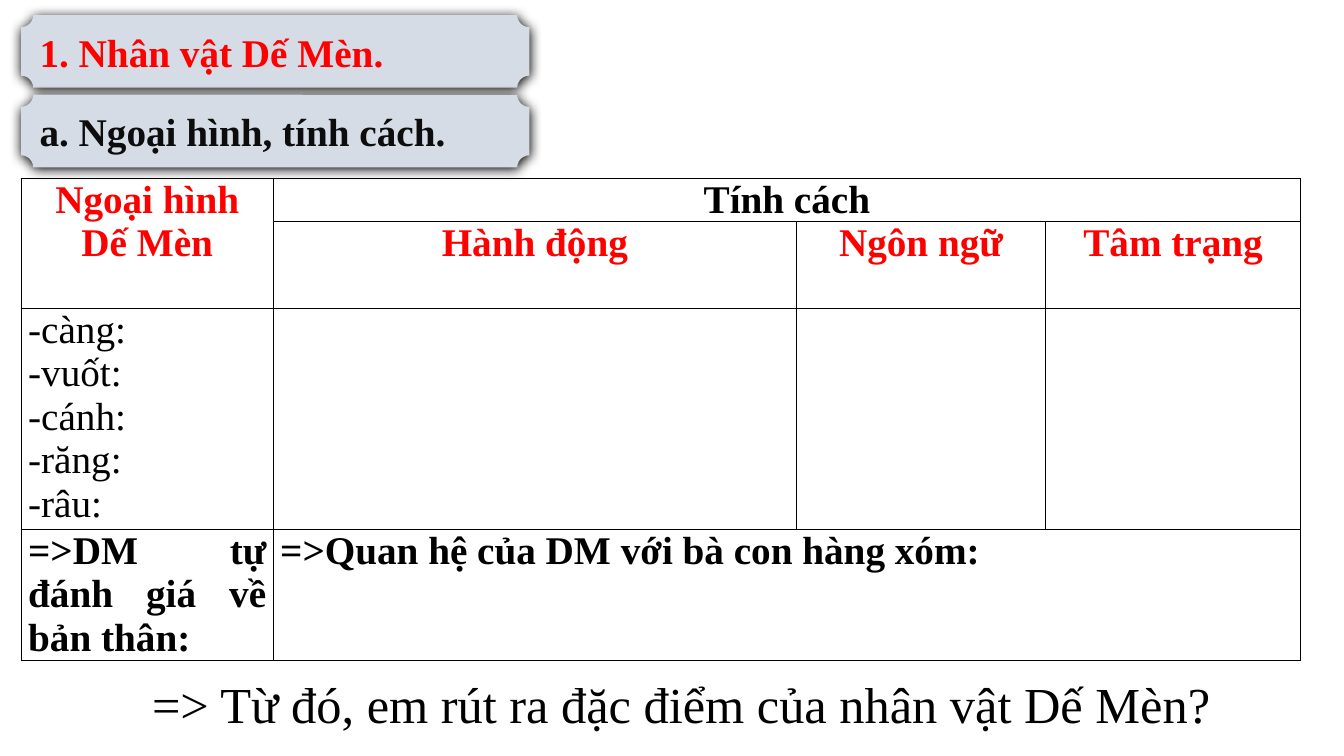
from lxml import etree
from pptx import Presentation
from pptx.dml.color import RGBColor
from pptx.enum.shapes import MSO_SHAPE
from pptx.enum.text import MSO_ANCHOR, PP_ALIGN
from pptx.oxml import parse_xml
from pptx.oxml.ns import nsdecls, qn
from pptx.util import Inches, Pt

PLAQUE = MSO_SHAPE.PLAQUE
MIDDLE = MSO_ANCHOR.MIDDLE
LEFT, CENTER, JUSTIFY = PP_ALIGN.LEFT, PP_ALIGN.CENTER, PP_ALIGN.JUSTIFY

RED = RGBColor(0xFF, 0x00, 0x00)
BLACK = RGBColor(0x00, 0x00, 0x00)
NEAR_BLACK = RGBColor(0x0D, 0x0D, 0x0D)
PALE_BLUE = RGBColor(0xD6, 0xDC, 0xE5)
FONT = "Times New Roman"

HEADINGS = [
    ("1. Nhân vật Dế Mèn.", RED),
    ("a. Ngoại hình, tính cách.", NEAR_BLACK),
]
COLUMN_WIDTHS = [2.5, 5.19, 2.47, 2.53]
ROW_HEIGHTS = [0.43, 0.86, 2.19, 1.3]
MERGES = [((0, 0), (1, 0)), ((0, 1), (0, 3)), ((3, 1), (3, 3))]
CELLS = {
    (0, 0): ("Ngoại hình Dế Mèn", RED, True, CENTER),
    (0, 1): ("Tính cách", BLACK, True, CENTER),
    (1, 1): ("Hành động", RED, True, CENTER),
    (1, 2): ("Ngôn ngữ", RED, True, CENTER),
    (1, 3): ("Tâm trạng", RED, True, CENTER),
    (2, 0): ("-càng:\n-vuốt:\n-cánh:\n-răng:\n-râu:", BLACK, False, JUSTIFY),
    (3, 0): ("=>DM tự đánh giá về bản thân:", BLACK, True, JUSTIFY),
    (3, 1): ("=>Quan hệ của DM với bà con hàng xóm:", BLACK, True, JUSTIFY),
}
QUESTION = "=> Từ đó, em rút ra đặc điểm của nhân vật Dế Mèn?"


def write(text_frame, text, size, color, bold, alignment):
    text_frame.text = text
    for paragraph in text_frame.paragraphs:
        paragraph.alignment = alignment
        for run in paragraph.runs:
            run.font.name = FONT
            run.font.size = Pt(size)
            run.font.bold = bold
            run.font.color.rgb = color


def add_shadow(shape):
    shape.shadow.inherit = False
    effects = shape._element.spPr.find(qn("a:effectLst"))
    effects.append(parse_xml(
        f'<a:outerShdw {nsdecls("a")} blurRad="{Pt(8.5)}" dist="{Pt(1)}" '
        'dir="5400000" algn="t" rotWithShape="0">'
        '<a:srgbClr val="000000"/></a:outerShdw>'))


def add_heading(slide, index, text, color):
    plaque = slide.shapes.add_shape(
        PLAQUE, Inches(0.21), Inches(0.15 + 0.79 * index), Inches(5.04), Inches(0.72))
    plaque.fill.solid()
    plaque.fill.fore_color.rgb = PALE_BLUE
    plaque.line.fill.background()
    add_shadow(plaque)
    plaque.text_frame.vertical_anchor = MIDDLE
    write(plaque.text_frame, text, 28, color, True, LEFT)


def add_borders(cell):
    properties = cell._tc.get_or_add_tcPr()
    for position, side in enumerate(("lnL", "lnR", "lnT", "lnB")):
        line = etree.Element(qn(f"a:{side}"), w=str(Pt(1)))
        fill = etree.SubElement(line, qn("a:solidFill"))
        etree.SubElement(fill, qn("a:srgbClr"), val=str(BLACK))
        properties.insert(position, line)


def add_character_table(slide):
    table = slide.shapes.add_table(
        len(ROW_HEIGHTS), len(COLUMN_WIDTHS), Inches(0.21), Inches(1.77),
        Inches(sum(COLUMN_WIDTHS)), Inches(sum(ROW_HEIGHTS))).table
    table.first_row = False
    table.horz_banding = False
    for column, width in zip(table.columns, COLUMN_WIDTHS):
        column.width = Inches(width)
    for row, height in zip(table.rows, ROW_HEIGHTS):
        row.height = Inches(height)
    for cell in table.iter_cells():
        cell.fill.background()
        cell.margin_left = cell.margin_right = Inches(0.07)
        cell.margin_top = cell.margin_bottom = 0
        add_borders(cell)
    for first, last in MERGES:
        table.cell(*first).merge(table.cell(*last))
    for place, (text, color, bold, alignment) in CELLS.items():
        write(table.cell(*place).text_frame, text, 28, color, bold, alignment)


def add_question(slide):
    box = slide.shapes.add_textbox(Inches(1.41), Inches(6.63), Inches(11.43), Inches(0.71))
    box.text_frame.word_wrap = True
    write(box.text_frame, QUESTION, 36, BLACK, False, JUSTIFY)


def main():
    presentation = Presentation()
    presentation.slide_width = Inches(13.33)
    presentation.slide_height = Inches(7.5)
    slide = presentation.slides.add_slide(presentation.slide_layouts[6])
    for index, (text, color) in enumerate(HEADINGS):
        add_heading(slide, index, text, color)
    add_character_table(slide)
    add_question(slide)
    presentation.save("out.pptx")


if __name__ == "__main__":
    main()
